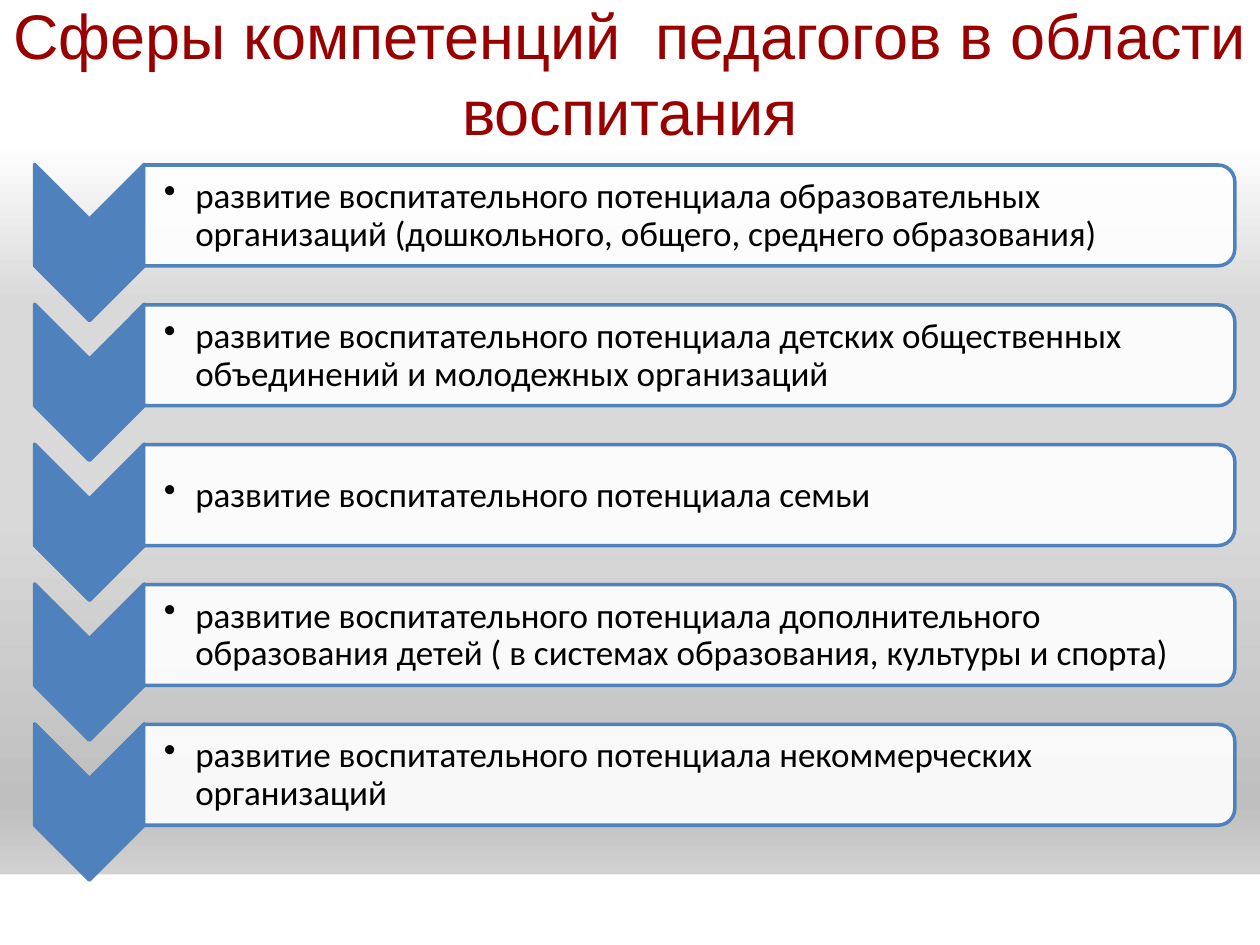
"""Build the slide on teachers' areas of competence in upbringing."""
from dataclasses import dataclass

from lxml import etree
from pptx import Presentation
from pptx.dml.color import RGBColor
from pptx.enum.shapes import MSO_SHAPE
from pptx.enum.text import MSO_ANCHOR, MSO_AUTO_SIZE, PP_ALIGN
from pptx.oxml import parse_xml
from pptx.oxml.ns import nsdecls, qn
from pptx.util import Pt

RECTANGLE = MSO_SHAPE.RECTANGLE
CHEVRON = MSO_SHAPE.CHEVRON
ROUNDED_BAR = MSO_SHAPE.ROUND_2_SAME_RECTANGLE
MIDDLE = MSO_ANCHOR.MIDDLE
CENTER = PP_ALIGN.CENTER
NO_AUTOFIT = MSO_AUTO_SIZE.NONE

EMU_PER_PX = 9144
ROW_STEP = 111

TITLE = "Сферы компетенций  педагогов в области воспитания"
COMPETENCES = (
    "развитие воспитательного потенциала образовательных организаций "
    "(дошкольного, общего, среднего образования)",
    "развитие воспитательного потенциала детских общественных объединений "
    "и молодежных организаций",
    "развитие воспитательного потенциала семьи",
    "развитие воспитательного потенциала дополнительного образования детей "
    "( в системах образования, культуры и спорта)",
    "развитие воспитательного потенциала некоммерческих организаций",
)


def px(*lengths):
    return [length * EMU_PER_PX for length in lengths]


@dataclass(frozen=True)
class Theme:
    white: str = "FFFFFF"
    accent: str = "4F81BD"
    heading: str = "990000"
    body: str = "000000"
    backdrop: tuple = ((0, "FFFFFF"), (15, "FFFFFF"), (32, "D9D9D9"),
                       (54, "D9D9D9"), (85, "BFBFBF"), (100, "E6E6E6"))
    heading_font: str = "Arial"
    body_font: str = "Calibri"
    heading_size: int = 36
    body_size: int = 20
    line_width: int = 2
    bar_opacity: int = 90


class SlideBuilder:
    def __init__(self, slide, theme):
        self.slide = slide
        self.theme = theme

    def background(self):
        self.slide.background.fill.gradient()
        gradient = self.slide.background._cSld.find(".//" + qn("a:gradFill"))
        stops = "".join(
            f'<a:gs pos="{position * 1000}"><a:srgbClr val="{color}"/></a:gs>'
            for position, color in self.theme.backdrop)
        gradient.getparent().replace(gradient, parse_xml(
            f'<a:gradFill {nsdecls("a")} rotWithShape="1"><a:gsLst>{stops}</a:gsLst>'
            '<a:lin ang="5400000" scaled="0"/></a:gradFill>'))

    def style(self, font, family, size, color):
        font.name = family
        font.size = Pt(size)
        font.color.rgb = RGBColor.from_string(color)

    def title(self, text, left, top, width, height):
        theme = self.theme
        heading = self.slide.shapes.title
        heading.left, heading.top, heading.width, heading.height = px(
            left, top, width, height)
        heading.fill.solid()
        heading.fill.fore_color.rgb = RGBColor.from_string(theme.white)
        frame = heading.text_frame
        frame.text = text
        frame.auto_size = NO_AUTOFIT
        frame.vertical_anchor = MIDDLE
        paragraph = frame.paragraphs[0]
        paragraph.alignment = CENTER
        self.style(paragraph.font, theme.heading_font, theme.heading_size, theme.heading)
        paragraph._p.pPr.find(qn("a:defRPr")).insert(0, parse_xml(
            f'<a:ln {nsdecls("a")} w="{Pt(0.75)}"><a:solidFill>'
            f'<a:srgbClr val="{theme.heading}"/></a:solidFill></a:ln>'))

    def shape(self, kind, left, top, width, height, color, outlined=True, rotation=0):
        shape = self.slide.shapes.add_shape(kind, *px(left, top, width, height))
        shape.shadow.inherit = False
        shape.rotation = rotation
        shape.fill.solid()
        shape.fill.fore_color.rgb = RGBColor.from_string(color)
        if outlined:
            shape.line.color.rgb = RGBColor.from_string(self.theme.accent)
            shape.line.width = Pt(self.theme.line_width)
        else:
            shape.line.fill.background()
        return shape

    def bar(self, left, top, width, height):
        bar = self.shape(ROUNDED_BAR, left, top, width, height,
                         self.theme.white, rotation=90)
        color = bar._element.spPr.find(qn("a:solidFill"))[0]
        etree.SubElement(color, qn("a:alpha"), val=str(self.theme.bar_opacity * 1000))

    def bullet(self, text, left, top, width, height):
        theme = self.theme
        box = self.slide.shapes.add_textbox(*px(left, top, width, height))
        frame = box.text_frame
        frame.text = text
        frame.word_wrap = True
        frame.vertical_anchor = MIDDLE
        frame.margin_left, frame.margin_top, frame.margin_right, frame.margin_bottom = px(
            16, 1, 1, 1)
        paragraph = frame.paragraphs[0]
        properties = paragraph._p.get_or_add_pPr()
        indent, = px(25)
        properties.set("marL", str(indent))
        properties.set("indent", str(-indent))
        etree.SubElement(properties, qn("a:buChar"), char="•")
        paragraph.line_spacing = 0.9
        self.style(paragraph.font, theme.body_font, theme.body_size, theme.body)


def main():
    presentation = Presentation()
    presentation.slide_width, presentation.slide_height = px(1000, 750)
    theme = Theme()
    slide = presentation.slides.add_slide(presentation.slide_layouts.get_by_name("Title Only"))
    builder = SlideBuilder(slide, theme)
    builder.background()
    builder.shape(RECTANGLE, 0, 694, 1001, 58, theme.white, outlined=False)
    builder.title(TITLE, 0, 0, 1000, 115)
    for row, competence in enumerate(COMPETENCES):
        offset = row * ROW_STEP
        builder.shape(CHEVRON, 9, 149 + offset, 124, 87, theme.accent, rotation=90)
        builder.bar(507, -262 + offset, 80, 866)
        builder.bullet(competence, 114, 135 + offset, 863, 73)
    presentation.save("out.pptx")


if __name__ == "__main__":
    main()
